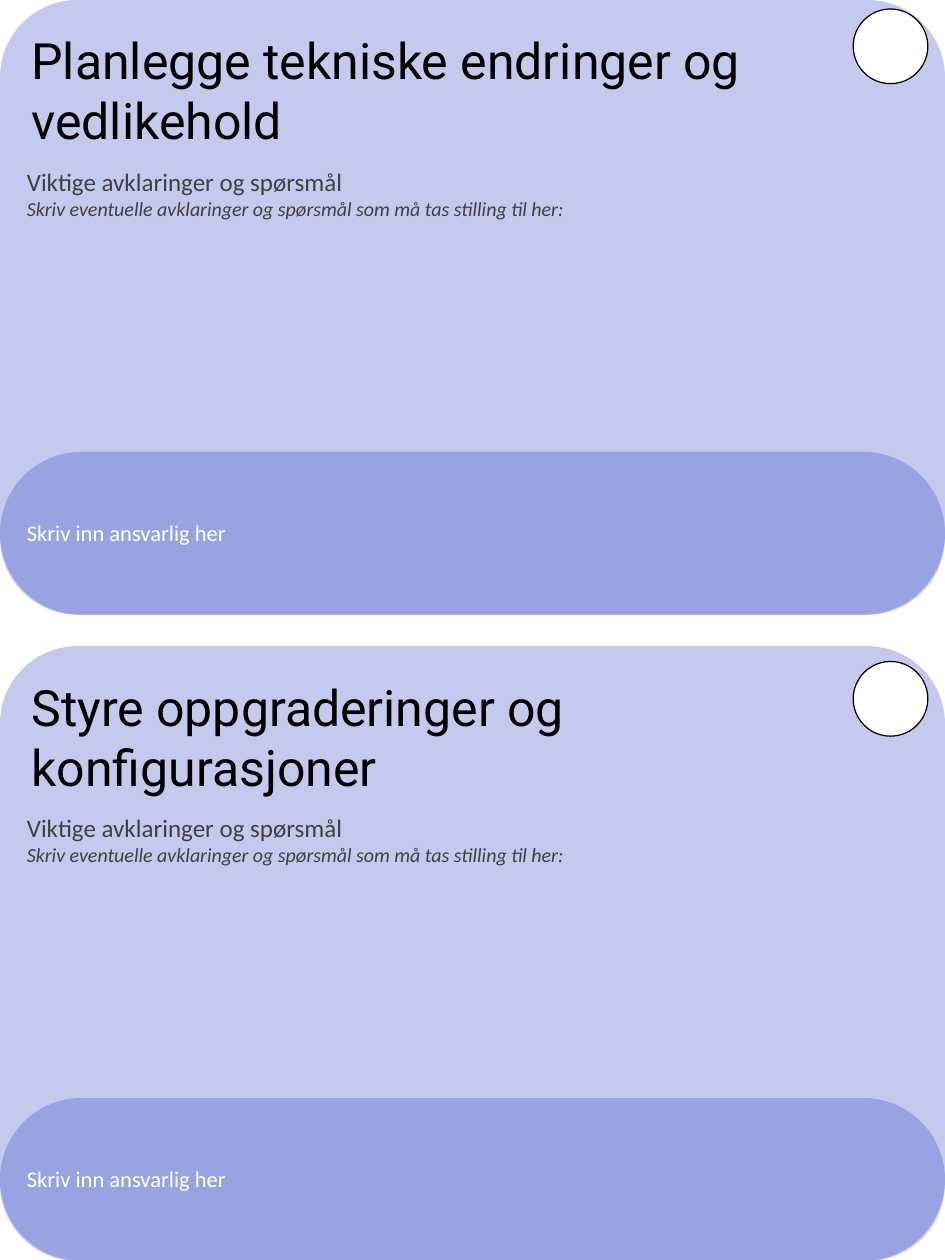
import dataclasses

import pptx
import pptx.dml.color
import pptx.enum.shapes
import pptx.enum.text
import pptx.util

Inches = pptx.util.Inches
SHAPES = pptx.enum.shapes.MSO_SHAPE

WIDTH, HEIGHT = 10.5, 14
CARD_HEIGHT = 6.83
CARD_PITCH = HEIGHT - CARD_HEIGHT + 0.01
BAND_HEIGHT = 1.81
TEXT_LEFT = 0.2
CIRCLE_SIZE = 0.83
CIRCLE_LEFT = 9.48

COLORS = {
    "card": "C4C9EE",
    "band": "9AA3E2",
    "title": "000000",
    "body": "404040",
    "white": "FFFFFF",
    "outline": "000000",
}


@dataclasses.dataclass
class Card:
    title: str
    row: int
    circle_offset: float

    @property
    def top(self) -> float:
        return self.row * CARD_PITCH


@dataclasses.dataclass
class Line:
    text: str
    size: int
    color: str
    font: str = "Calibri"
    italic: bool = False


CARDS = [
    Card("Planlegge tekniske endringer og vedlikehold", 0, 0.1),
    Card("Styre oppgraderinger og konfigurasjoner", 1, 0.17),
]
QUESTIONS = [
    Line("Viktige avklaringer og spørsmål", 20, "body"),
    Line("Skriv eventuelle avklaringer og spørsmål som må tas stilling til her:",
         16, "body", italic=True),
]
OWNER = [Line("Skriv inn ansvarlig her", 18, "white")]


def rgb(name: str) -> pptx.dml.color.RGBColor:
    return pptx.dml.color.RGBColor.from_string(COLORS[name])


def write_lines(frame, lines: list[Line]) -> None:
    frame.word_wrap = True
    frame.vertical_anchor = pptx.enum.text.MSO_ANCHOR.TOP
    for index, line in enumerate(lines):
        paragraph = frame.add_paragraph() if index else frame.paragraphs[0]
        paragraph.text = line.text
        paragraph.alignment = pptx.enum.text.PP_ALIGN.LEFT
        paragraph.font.name = line.font
        paragraph.font.size = pptx.util.Pt(line.size)
        paragraph.font.italic = line.italic
        paragraph.font.color.rgb = rgb(line.color)


def add_filled(slide, kind, left: float, top: float, width: float, height: float, color: str):
    shape = slide.shapes.add_shape(
        kind, Inches(left), Inches(top), Inches(width), Inches(height))
    shape.shadow.inherit = False
    shape.fill.solid()
    shape.fill.fore_color.rgb = rgb(color)
    shape.line.fill.background()
    return shape


def add_text(slide, top: float, width: float, height: float, lines: list[Line]) -> None:
    box = slide.shapes.add_textbox(
        Inches(TEXT_LEFT), Inches(top), Inches(width), Inches(height))
    write_lines(box.text_frame, lines)
    box.text_frame.auto_size = pptx.enum.text.MSO_AUTO_SIZE.SHAPE_TO_FIT_TEXT


def add_card(slide, card: Card) -> None:
    # Panel with its heading
    panel = add_filled(slide, SHAPES.ROUNDED_RECTANGLE, 0, card.top, WIDTH, CARD_HEIGHT, "card")
    panel.adjustments[0] = 0.126
    write_lines(panel.text_frame, [Line(card.title, 40, "title", "Roboto")])
    panel.text_frame.margin_top = Inches(0.08)

    # Band for the person responsible
    band_top = card.top + CARD_HEIGHT - BAND_HEIGHT
    band = add_filled(slide, SHAPES.ROUNDED_RECTANGLE, 0, band_top, WIDTH, BAND_HEIGHT, "band")
    band.adjustments[0] = 0.5

    # Prompts
    add_text(slide, card.top + 1.8, WIDTH - TEXT_LEFT, 0.71, QUESTIONS)
    add_text(slide, band_top + 0.7, WIDTH / 2, 0.4, OWNER)

    # Number circle
    circle = add_filled(slide, SHAPES.OVAL, CIRCLE_LEFT, card.top + card.circle_offset,
                        CIRCLE_SIZE, CIRCLE_SIZE, "white")
    circle.line.color.rgb = rgb("outline")
    circle.line.width = pptx.util.Pt(1)


def main() -> None:
    presentation = pptx.Presentation()
    presentation.slide_width = Inches(WIDTH)
    presentation.slide_height = Inches(HEIGHT)
    slide = presentation.slides.add_slide(presentation.slide_layouts[6])
    for card in CARDS:
        add_card(slide, card)
    presentation.save("out.pptx")


if __name__ == "__main__":
    main()
